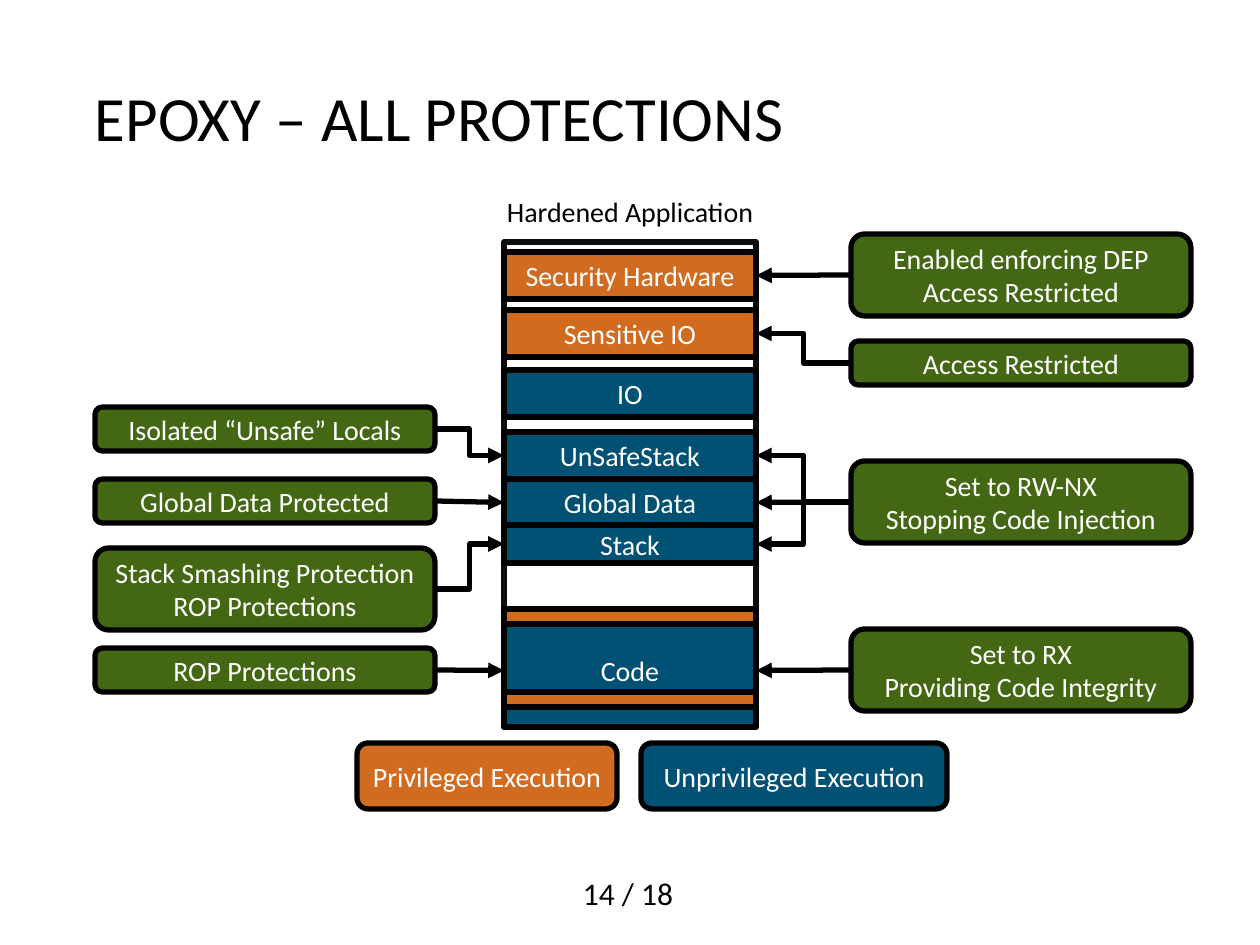
from lxml import etree
from pptx import Presentation
from pptx.dml.color import RGBColor
from pptx.enum.shapes import MSO_CONNECTOR, MSO_SHAPE
from pptx.enum.text import MSO_ANCHOR, PP_ALIGN
from pptx.oxml.ns import qn
from pptx.util import Emu, Pt

SCALE = 914400 / 126
BLACK, WHITE = "000000", "FFFFFF"
ORANGE, BLUE, GREEN = "D06B20", "005173", "436712"
TOP, LEFT, BOTTOM, RIGHT = range(4)


def px(n):
    """Turn a length in px into EMU."""
    return Emu(round(n * SCALE))


def rgb(value):
    """Turn a hex string into a colour."""
    return RGBColor.from_string(value)


def write(tf, text, size, color, align):
    """Fill a text frame, one paragraph for each line."""
    tf.word_wrap = True
    tf.vertical_anchor = MSO_ANCHOR.MIDDLE
    for i, line in enumerate(text.split("\n")):
        p = tf.paragraphs[0] if i == 0 else tf.add_paragraph()
        p.text = line
        p.alignment = align
        p.font.name = "Calibri"
        p.font.size = Pt(size)
        p.font.color.rgb = rgb(color)


def add_text(s, box, text, size, align=PP_ALIGN.CENTER):
    """Add a text box with black text and no side margins."""
    tf = s.shapes.add_textbox(*map(px, box)).text_frame
    tf.margin_left = tf.margin_right = 0
    write(tf, text, size, BLACK, align)


def add_block(s, box, text, fill, kind=MSO_SHAPE.RECTANGLE, line=BLACK):
    """Add an outlined block with centred white text."""
    sp = s.shapes.add_shape(kind, *map(px, box))
    sp.shadow.inherit = False
    if fill:
        sp.fill.solid()
        sp.fill.fore_color.rgb = rgb(fill)
    else:
        sp.fill.background()
    sp.line.color.rgb = rgb(line)
    sp.line.width = Pt(3)
    if text:
        sp.text_frame.margin_left = sp.text_frame.margin_right = 0
        write(sp.text_frame, text, 16, WHITE, PP_ALIGN.CENTER)
    return sp


def add_arrow(s, note, block, kind):
    """Join the facing sides of a note and a memory block."""
    if note.left < block.left:
        sides, x1, x2 = (RIGHT, LEFT), note.left + note.width, block.left
    else:
        sides, x1, x2 = (LEFT, RIGHT), note.left, block.left + block.width
    y1, y2 = (sp.top + sp.height // 2 for sp in (note, block))
    c = s.shapes.add_connector(kind, x1, y1, x2, y2)
    c.begin_connect(note, sides[0])
    c.end_connect(block, sides[1])
    c.line.color.rgb = rgb(BLACK)
    c.line.width = Pt(3)
    etree.SubElement(c.line._get_or_add_ln(), qn("a:tailEnd"), type="triangle")
    etree.SubElement(c._element.spPr, qn("a:effectLst"))


def application(s, box):
    """Draw the memory map of the application and return its named blocks."""
    x, y, w, h = box
    add_text(s, (x - 46, y - 54, w + 92, 47), "Hardened Application", 16)
    add_block(s, box, "", None, line="0D0D0D")
    rows = [
        ("Security Hardware", 10, 47, ORANGE),
        ("Sensitive IO", 68, 47, ORANGE),
        ("IO", 128, 47, BLUE),
        ("UnSafeStack", 190, 47, BLUE),
        ("Global Data", 237, 47, BLUE),
        ("Stack", 283, 38, BLUE),
        ("Code", 372, 113, BLUE),
    ]
    blocks = {text: add_block(s, (x, y + dy, w, height), text, fill)
              for text, dy, height, fill in rows}
    for dy in (367, 450):
        add_block(s, (x, y + dy, w, 15), "", ORANGE)
    return blocks


def notes(s, box, rows, blocks):
    """Draw a column of protection notes with arrows to the blocks they guard."""
    x, y, w, h = box
    for dy, text, straight, bent in rows:
        height = 82 if "\n" in text else 44
        note = add_block(s, (x, y + dy, w, height), text, GREEN,
                         MSO_SHAPE.ROUNDED_RECTANGLE)
        for name in straight:
            add_arrow(s, note, blocks[name], MSO_CONNECTOR.STRAIGHT)
        for name in bent:
            add_arrow(s, note, blocks[name], MSO_CONNECTOR.ELBOW)


def legend(s, box):
    """Draw the key to the two execution levels."""
    x, y, w, h = box
    for dx, width, text, fill in (
        (0, 260, "Privileged Execution", ORANGE),
        (284, 306, "Unprivileged Execution", BLUE),
    ):
        add_block(s, (x + dx, y, width, h), text, fill,
                  MSO_SHAPE.ROUNDED_RECTANGLE)


def main():
    """Build the slide and save it."""
    prs = Presentation()
    prs.slide_width, prs.slide_height = px(1260), px(945)
    s = prs.slides.add_slide(prs.slide_layouts[6])
    add_text(s, (95, 38, 1071, 157), "EPOXY – ALL PROTECTIONS", 36,
             PP_ALIGN.LEFT)
    blocks = application(s, (504, 242, 252, 485))
    notes(s, (95, 407, 340, 285), [
        (0, "Isolated “Unsafe” Locals", [], ["UnSafeStack"]),
        (72, "Global Data Protected", ["Global Data"], []),
        (141, "Stack Smashing Protection\nROP Protections", [], ["Stack"]),
        (241, "ROP Protections", ["Code"], []),
    ], blocks)
    notes(s, (851, 234, 340, 477), [
        (0, "Enabled enforcing DEP\nAccess Restricted",
         ["Security Hardware"], []),
        (107, "Access Restricted", [], ["Sensitive IO"]),
        (227, "Set to RW-NX\nStopping Code Injection",
         ["Global Data"], ["UnSafeStack", "Stack"]),
        (395, "Set to RX\nProviding Code Integrity", ["Code"], []),
    ], blocks)
    legend(s, (357, 743, 590, 66))
    add_text(s, (571, 868, 114, 50), "14 / 18", 18)
    prs.save("out.pptx")


if __name__ == "__main__":
    main()
